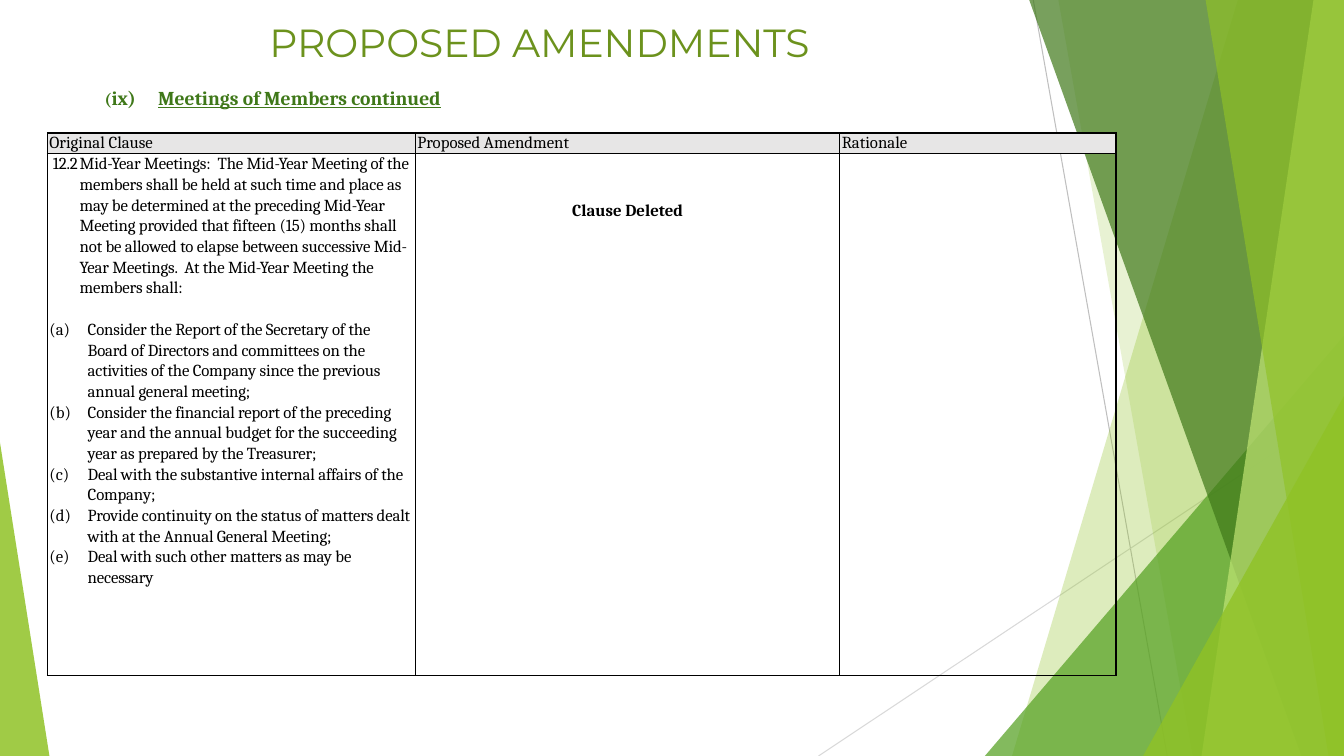
from dataclasses import dataclass

from lxml.etree import SubElement
from pptx import Presentation
from pptx.dml.color import RGBColor
from pptx.enum.shapes import MSO_CONNECTOR, MSO_SHAPE
from pptx.enum.text import MSO_ANCHOR, PP_ALIGN
from pptx.oxml.ns import qn
from pptx.util import Emu, Inches, Pt


@dataclass(frozen=True)
class Theme:
    lime: str = "90C226"
    pale_lime: str = "C0E474"
    leaf: str = "54A021"
    forest: str = "3F7819"
    olive: str = "6C921D"
    header: str = "E7E6E6"
    ink: str = "000000"
    line_dark: str = "BFBFBF"
    line_light: str = "D9D9D9"
    display: str = "Montserrat"
    serif: str = "Cambria"
    title_size: int = 28
    heading_size: int = 14
    body_size: int = 12


theme = Theme()
deck = Presentation()
deck.slide_width, deck.slide_height = Inches(13.33), Inches(7.5)
slide = deck.slides.add_slide(deck.slide_layouts[5])
shapes = slide.shapes


def spot(across, down):
    return Emu(round(deck.slide_width * across / 100)), Emu(round(deck.slide_height * down / 100))


def set_font(font, face, size, color):
    font.name, font.size = face, Pt(size)
    font.color.rgb = RGBColor.from_string(color)


for start, end, color in [
    ((76.88, 0), (86.85, 100), theme.line_dark),
    ((100, 53.73), (60.9, 100), theme.line_light),
]:
    ray = shapes.add_connector(MSO_CONNECTOR.STRAIGHT, *spot(*start), *spot(*end))
    ray.line.width = Pt(0.75)
    ray.line.color.rgb = RGBColor.from_string(color)
    SubElement(ray._element.spPr, qn("a:effectLst"))

facets = [
    ("shard", (92.1, 75.3), theme.lime, 30),
    ("shard", (78.75, 88.73), theme.lime, 20),
    ("triangle", (73.28, 44.4, 26.72, 55.6, 1), theme.leaf, 72),
    ("shard", (76.58, 96.83), theme.forest, 70),
    ("shard", (97.73, 89.4), theme.pale_lime, 70),
    ("shard", (89.7, 98.85), theme.lime, 65),
    ("triangle", (85.05, 52.4, 14.95, 47.6, 1), theme.lime, 80),
    ("triangle", (0, 58.53, 3.68, 41.47, 0), theme.lime, 85),
]
for kind, geometry, color, opacity in facets:
    if kind == "shard":
        top, bottom = geometry
        outline = shapes.build_freeform(*spot(top, 0))
        outline.add_line_segments([spot(100, 0), spot(100, 100), spot(bottom, 100)])
        facet = outline.convert_to_shape()
    else:
        left, top, width, height, apex = geometry
        facet = shapes.add_shape(
            MSO_SHAPE.ISOSCELES_TRIANGLE, *spot(left, top), *spot(width, height)
        )
        facet.adjustments[0] = apex
    facet.shadow.inherit = False
    facet.line.fill.background()
    facet.fill.solid()
    facet.fill.fore_color.rgb = RGBColor.from_string(color)
    tint = facet._element.spPr.find(qn("a:solidFill"))[0]
    SubElement(tint, qn("a:alpha"), val=str(opacity * 1000))

title = shapes.title
title.left, title.top = spot(4.88, 1.73)
title.width, title.height = spot(70.5, 8.93)
title.text_frame.text = "PROPOSED AMENDMENTS"
title.text_frame.vertical_anchor = MSO_ANCHOR.TOP
headline = title.text_frame.paragraphs[0]
headline.alignment = PP_ALIGN.CENTER
set_font(headline.font, theme.display, theme.title_size, theme.olive)

section = shapes.add_textbox(*spot(7.05, 10.67), *spot(41.4, 4.53)).text_frame
section.word_wrap = True
section.vertical_anchor = MSO_ANCHOR.MIDDLE
section_line = section.paragraphs[0]
set_font(section_line.font, theme.serif, theme.heading_size, theme.forest)
section_line.font.bold = True
section_stops = SubElement(section_line._p.get_or_add_pPr(), qn("a:tabLst"))
section_line._p.pPr.insert(0, section_stops)
SubElement(section_stops, qn("a:tab"), pos=str(Inches(0.53)), algn="l")
for wording, size, underlined in [
    ("(", theme.body_size, False),
    ("ix)\t", theme.heading_size, False),
    ("Meetings of Members continued", theme.heading_size, True),
]:
    part = section_line.add_run()
    part.text = wording
    set_font(part.font, theme.serif, size, theme.forest)
    part.font.bold, part.font.underline = True, underlined

column_shares, row_shares = (27.38, 31.58, 20.55), (2.53, 69.07)
amendments = shapes.add_table(
    2, 3, *spot(3.53, 17.6), *spot(sum(column_shares), sum(row_shares))
).table
amendments.first_row = amendments.horz_banding = False
for column, share in zip(amendments.columns, column_shares):
    column.width = spot(share, 0)[0]
for row, share in zip(amendments.rows, row_shares):
    row.height = spot(0, share)[1]

clause = (
    " 12.2\tMid-Year Meetings:  The Mid-Year Meeting of the members shall be held at such time "
    "and place as may be determined at the preceding Mid-Year Meeting provided that fifteen (15) "
    "months shall not be allowed to elapse between successive Mid-Year Meetings.  At the Mid-Year "
    "Meeting the members shall:"
)
duties = [
    "Consider the Report of the Secretary of the Board of Directors and committees on the "
    "activities of the Company since the previous annual general meeting;",
    "Consider the financial report of the preceding year and the annual budget for the "
    "succeeding year as prepared by the Treasurer;",
    "Deal with the substantive internal affairs of the Company;",
    "Provide continuity on the status of matters dealt with at the Annual General Meeting;",
    "Deal with such other matters as may be necessary",
]
contents = [
    ["Original Clause", "Proposed Amendment", "Rationale"],
    ["\n".join([clause, *duties]), "Clause Deleted", ""],
]
for row_number, wordings in enumerate(contents):
    for column_number, wording in enumerate(wordings):
        cell = amendments.cell(row_number, column_number)
        cell.margin_left = cell.margin_right = Inches(0.02)
        cell.margin_top = cell.margin_bottom = 0
        cell.text = wording
        for paragraph in cell.text_frame.paragraphs:
            set_font(paragraph.font, theme.serif, theme.body_size, theme.ink)
        for side in ("a:lnL", "a:lnR", "a:lnT", "a:lnB"):
            border = SubElement(cell._tc.get_or_add_tcPr(), qn(side), w=str(Pt(1)))
            SubElement(SubElement(border, qn("a:solidFill")), qn("a:srgbClr"), val=theme.ink)
        if row_number == 0:
            cell.fill.solid()
            cell.fill.fore_color.rgb = RGBColor.from_string(theme.header)
        else:
            cell.fill.background()

clause_lines = amendments.cell(1, 0).text_frame.paragraphs
for number, paragraph in enumerate(clause_lines):
    paragraph.line_spacing = 1.07
    if number == 1:
        paragraph.space_before = Pt(15)
    indent = Inches(0.38 if number else 0.3)
    properties = paragraph._p.get_or_add_pPr()
    properties.set("marL", str(indent))
    properties.set("indent", str(-indent))
    if number:
        lettering = SubElement(properties, qn("a:buAutoNum"), type="alphaLcParenBoth")
        properties.find(qn("a:defRPr")).addprevious(lettering)
    for run in paragraph.runs:
        run.font._element.set("spc", "-10")

deleted = amendments.cell(1, 1)
deleted.margin_top = Inches(0.45)
verdict = deleted.text_frame.paragraphs[0]
verdict.alignment = PP_ALIGN.CENTER
verdict.line_spacing = 1.15
verdict.font.bold = True

deck.save("out.pptx")
